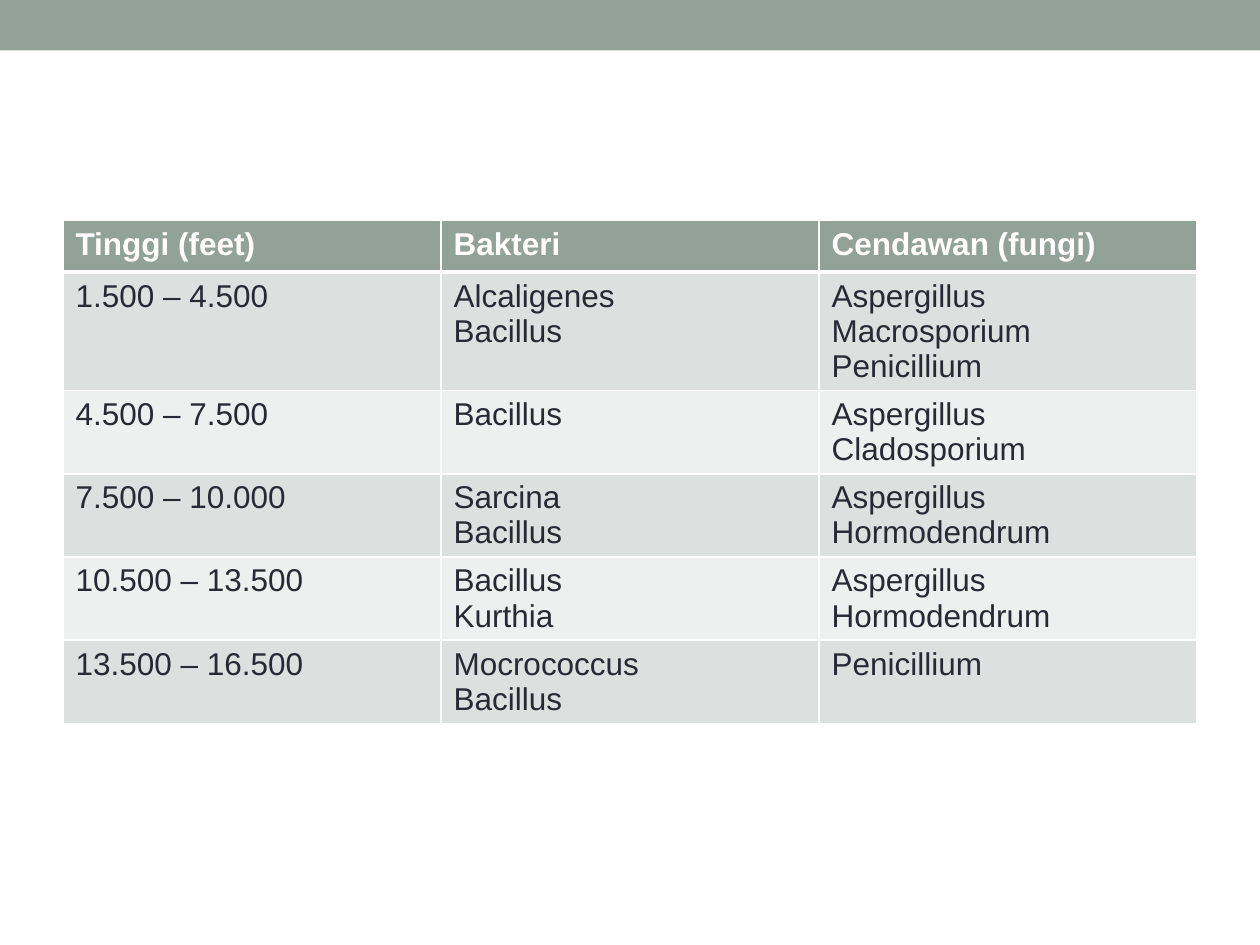
from dataclasses import dataclass

from lxml import etree
from pptx import Presentation
from pptx.dml.color import RGBColor
from pptx.enum.shapes import MSO_SHAPE
from pptx.oxml.ns import qn
from pptx.util import Inches, Pt

RECTANGLE = MSO_SHAPE.RECTANGLE
BLANK_LAYOUT = 6

HEADINGS = ["Tinggi (feet)", "Bakteri", "Cendawan (fungi)"]
MICROBES_BY_HEIGHT = [
    ["1.500 – 4.500", "Alcaligenes\nBacillus", "Aspergillus\nMacrosporium\nPenicillium"],
    ["4.500 – 7.500", "Bacillus", "Aspergillus\nCladosporium"],
    ["7.500 – 10.000", "Sarcina\nBacillus", "Aspergillus\nHormodendrum"],
    ["10.500 – 13.500", "Bacillus\nKurthia", "Aspergillus\nHormodendrum"],
    ["13.500 – 16.500", "Mocrococcus\nBacillus", "Penicillium"],
]


@dataclass(frozen=True)
class Theme:
    font: str = "Arial"
    size: int = 18
    accent: str = "93A299"
    ink: str = "292934"
    white: str = "FFFFFF"
    bands: tuple = ("DCE0DE", "EEF0EF")
    rule: int = 1
    header_rule: int = 3


class PageBuilder:
    def __init__(self, page, theme):
        self.page = page
        self.theme = theme

    def bar(self, left, top, width, height):
        shape = self.page.shapes.add_shape(
            RECTANGLE, Inches(left), Inches(top), Inches(width), Inches(height))
        shape.shadow.inherit = False
        shape.fill.solid()
        shape.fill.fore_color.rgb = RGBColor.from_string(self.theme.accent)
        shape.line.fill.background()

    def table(self, rows, left, top, column_width, row_height):
        """Add a table whose first row is the header; rows grow to fit their text."""
        columns = len(rows[0])
        grid = self.page.shapes.add_table(
            len(rows), columns, Inches(left), Inches(top),
            Inches(column_width * columns), Inches(row_height * len(rows))).table
        for row_index, row in enumerate(rows):
            for column_index, text in enumerate(row):
                self.cell(grid.cell(row_index, column_index), text, row_index)

    def cell(self, cell, text, row_index):
        theme = self.theme
        is_header = row_index == 0
        self.borders(cell,
                     top=theme.header_rule if row_index == 1 else theme.rule,
                     bottom=theme.header_rule if is_header else theme.rule)
        fill = theme.accent if is_header else theme.bands[(row_index - 1) % 2]
        cell.fill.solid()
        cell.fill.fore_color.rgb = RGBColor.from_string(fill)
        cell.text = text
        font_format = {"name": theme.font, "size": Pt(theme.size), "bold": is_header}
        ink = theme.white if is_header else theme.ink
        for para in cell.text_frame.paragraphs:
            for span in para.runs:
                for name, value in font_format.items():
                    setattr(span.font, name, value)
                span.font.color.rgb = RGBColor.from_string(ink)

    def borders(self, cell, top, bottom):
        properties = cell._tc.get_or_add_tcPr()
        widths = {"L": self.theme.rule, "R": self.theme.rule, "T": top, "B": bottom}
        for side, width in widths.items():
            line = etree.SubElement(properties, qn(f"a:ln{side}"), w=str(Pt(width)))
            fill = etree.SubElement(line, qn("a:solidFill"))
            etree.SubElement(fill, qn("a:srgbClr"), val=self.theme.white)


def main():
    deck = Presentation()
    deck.slide_width, deck.slide_height = Inches(10), Inches(7.5)
    page = deck.slides.add_slide(deck.slide_layouts[BLANK_LAYOUT])
    builder = PageBuilder(page, Theme())
    builder.bar(0, 0, 10, 0.4)
    builder.table([HEADINGS, *MICROBES_BY_HEIGHT], left=0.5, top=1.75,
                  column_width=3, row_height=0.41)
    deck.save("out.pptx")


if __name__ == "__main__":
    main()
